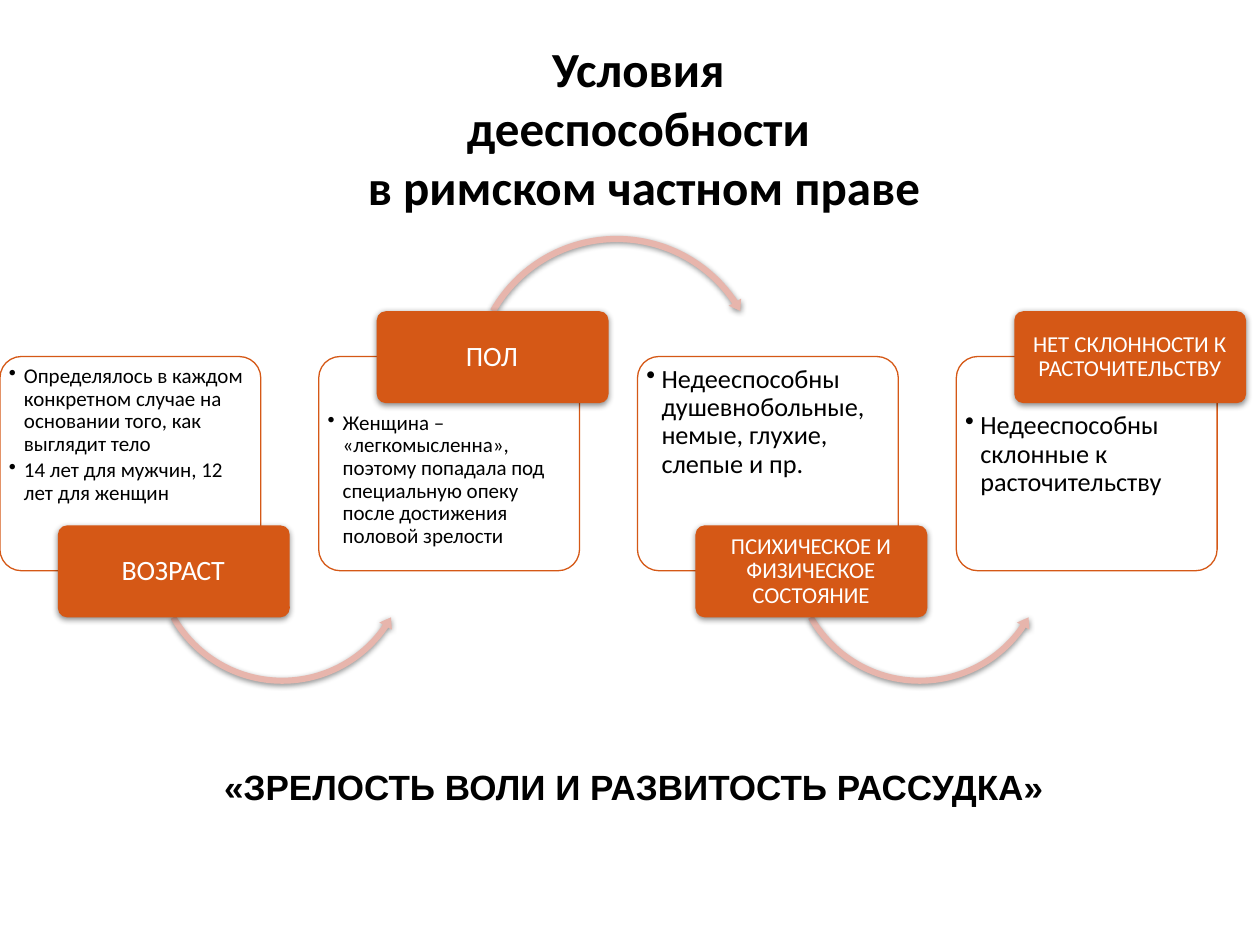
from dataclasses import dataclass

from lxml import etree
from pptx import Presentation
from pptx import util as u
from pptx.dml.color import RGBColor
from pptx.enum import shapes, text
from pptx.oxml.ns import qn


@dataclass(frozen=True)
class Theme:
    accent: RGBColor = RGBColor(0xD5, 0x58, 0x16)
    arrow: RGBColor = RGBColor(0xE7, 0xB5, 0xAC)
    ink: RGBColor = RGBColor(0, 0, 0)
    paper: RGBColor = RGBColor(255, 255, 255)
    face: str = "Calibri"
    closing_face: str = "Arial"
    title_size: int = 28
    closing_size: int = 20
    large_label: int = 16
    small_label: int = 13
    large_body: int = 15
    small_body: int = 12


@dataclass(frozen=True)
class Area:
    left: float
    top: float
    width: float
    height: float

    def lengths(self) -> tuple:
        return tuple(u.Inches(v) for v in (self.left, self.top, self.width, self.height))


@dataclass(frozen=True)
class Arc:
    kind: shapes.MSO_SHAPE
    left: float
    top: float
    size: float
    adjustments: tuple[float, ...]


@dataclass(frozen=True)
class Condition:
    label: str
    label_size: int
    points: tuple[str, ...]
    body_size: int
    label_below: bool


THEME = Theme()
PITCH = 2.53
LOWER_ARC = Arc(shapes.MSO_SHAPE.LEFT_CIRCULAR_ARROW, 1.19, 3.36, 2.1,
                (0.023, 2.809, 20.564, 90.245, 0.027))
UPPER_ARC = Arc(shapes.MSO_SHAPE.CIRCULAR_ARROW, 1.18, 1.84, 2.37,
                (0.021, 2.481, 195.764, 125.755, 0.024))
CONDITIONS = (
    Condition("ВОЗРАСТ", THEME.large_label,
              ("Определялось в каждом конкретном случае на основании того, как выглядит тело",
               "14 лет для мужчин, 12 лет для женщин"), THEME.small_body, True),
    Condition("ПОЛ", THEME.large_label,
              ("Женщина – «легкомысленна», поэтому попадала под специальную опеку "
               "после достижения половой зрелости",), THEME.small_body, False),
    Condition("ПСИХИЧЕСКОЕ И ФИЗИЧЕСКОЕ СОСТОЯНИЕ", THEME.small_label,
              ("Недееспособны душевнобольные, немые, глухие, слепые и пр.",),
              THEME.large_body, True),
    Condition("НЕТ СКЛОННОСТИ К РАСТОЧИТЕЛЬСТВУ", THEME.small_label,
              ("Недееспособны склонные к расточительству",), THEME.large_body, False),
)


def add_filled(parent, kind, area: Area, color: RGBColor, adjustments: tuple[float, ...]):
    """Add a borderless flat shape with the given adjustments."""
    shape = parent.add_shape(kind, *area.lengths())
    for index, value in enumerate(adjustments):
        shape.adjustments[index] = value
    shape.fill.solid()
    shape.fill.fore_color.rgb = color
    shape.line.fill.background()
    shape.shadow.inherit = False
    return shape


def add_shadow(shape) -> None:
    """Give a shape a soft shadow straight below it."""
    effects = shape._element.spPr.find(qn("a:effectLst"))
    shadow = etree.SubElement(effects, qn("a:outerShdw"), blurRad=str(u.Pt(3.5)),
                              dist=str(u.Pt(1.1)), dir="5400000", rotWithShape="0")
    color = etree.SubElement(shadow, qn("a:srgbClr"), val="000000")
    etree.SubElement(color, qn("a:alpha"), val="45000")


def add_text(parent, area: Area, lines: tuple[str, ...], size: int, color: RGBColor,
             face: str = THEME.face, bold: bool = False, centred: bool = False,
             bulleted: bool = False, spacing: float | None = None):
    """Add a text box with one paragraph per line and return its frame."""
    frame = parent.add_textbox(*area.lengths()).text_frame
    frame.word_wrap = True
    for index, line in enumerate(lines):
        para = frame.add_paragraph() if index else frame.paragraphs[0]
        para.text = line
        para.line_spacing = spacing
        if centred:
            para.alignment = text.PP_ALIGN.CENTER
        if bulleted:
            add_bullet(para)
        para.font.size = u.Pt(size)
        para.font.name = face
        para.font.bold = bold
        para.font.color.rgb = color
    return frame


def add_bullet(para) -> None:
    """Turn a paragraph into a bullet point with a hanging indent."""
    para.level = 1
    para.space_after = u.Pt(2)
    properties = para._p.get_or_add_pPr()
    properties.set("marL", str(u.Inches(0.12)))
    properties.set("indent", str(u.Inches(-0.12)))
    etree.SubElement(properties, qn("a:buChar"), char="•")


def set_insets(frame, across: float, down: float) -> None:
    """Set the side insets and the top and bottom insets of a frame."""
    frame.margin_left = frame.margin_right = u.Inches(across)
    frame.margin_top = frame.margin_bottom = u.Inches(down)


def add_card(parent, left: float, condition: Condition) -> None:
    """Add the outlined card with its bullet points."""
    card = add_filled(parent, shapes.MSO_SHAPE.ROUNDED_RECTANGLE,
                      Area(left, 2.83, 2.07, 1.7), THEME.paper, (0.1,))
    color = card._element.spPr.find(qn("a:solidFill"))[0]
    etree.SubElement(color, qn("a:alpha"), val="90000")
    card.line.color.rgb = THEME.accent
    card.line.width = u.Pt(0.75)
    top = 2.87 if condition.label_below else 3.24
    frame = add_text(parent, Area(left + 0.04, top, 1.99, 1.26), condition.points,
                     condition.body_size, THEME.ink, bulleted=True, spacing=0.9)
    set_insets(frame, 0.03, 0.03)


def add_arc(parent, left: float, arc: Arc) -> None:
    """Add the curved arrow that leads to the next card."""
    area = Area(left + arc.left, arc.top, arc.size, arc.size)
    add_shadow(add_filled(parent, arc.kind, area, THEME.arrow, arc.adjustments))


def add_label(parent, left: float, condition: Condition) -> None:
    """Add the filled label that overlaps a card."""
    top = 4.17 if condition.label_below else 2.47
    plate = add_filled(parent, shapes.MSO_SHAPE.ROUNDED_RECTANGLE,
                       Area(left + 0.46, top, 1.84, 0.73), THEME.accent, (0.1,))
    add_shadow(plate)
    frame = add_text(parent, Area(left + 0.48, top + 0.02, 1.79, 0.69), (condition.label,),
                     condition.label_size, THEME.paper, centred=True, spacing=0.9)
    frame.vertical_anchor = text.MSO_ANCHOR.MIDDLE
    set_insets(frame, 0.03, 0.02)


def main() -> None:
    """Build the slide and save it."""
    deck = Presentation()
    deck.slide_width, deck.slide_height = u.Inches(10), u.Inches(7.5)
    page = deck.slides.add_slide(deck.slide_layouts[6])
    diagram = page.shapes.add_group_shape().shapes
    for index, condition in enumerate(CONDITIONS):
        left = index * PITCH
        add_card(diagram, left, condition)
        if index < len(CONDITIONS) - 1:
            add_arc(diagram, left, LOWER_ARC if condition.label_below else UPPER_ARC)
        add_label(diagram, left, condition)
    closing = add_text(page.shapes, Area(1.68, 6.03, 6.85, 0.44),
                       ("«ЗРЕЛОСТЬ ВОЛИ И РАЗВИТОСТЬ РАССУДКА»",), THEME.closing_size,
                       THEME.ink, face=THEME.closing_face, bold=True)
    title = add_text(page.shapes, Area(2.79, 0.26, 4.64, 1.51),
                     ("Условия \vдееспособности \vв римском частном праве",),
                     THEME.title_size, THEME.ink, bold=True, centred=True)
    title.word_wrap = False
    for frame in (closing, title):
        frame.auto_size = text.MSO_AUTO_SIZE.SHAPE_TO_FIT_TEXT
    deck.save("out.pptx")


if __name__ == "__main__":
    main()
